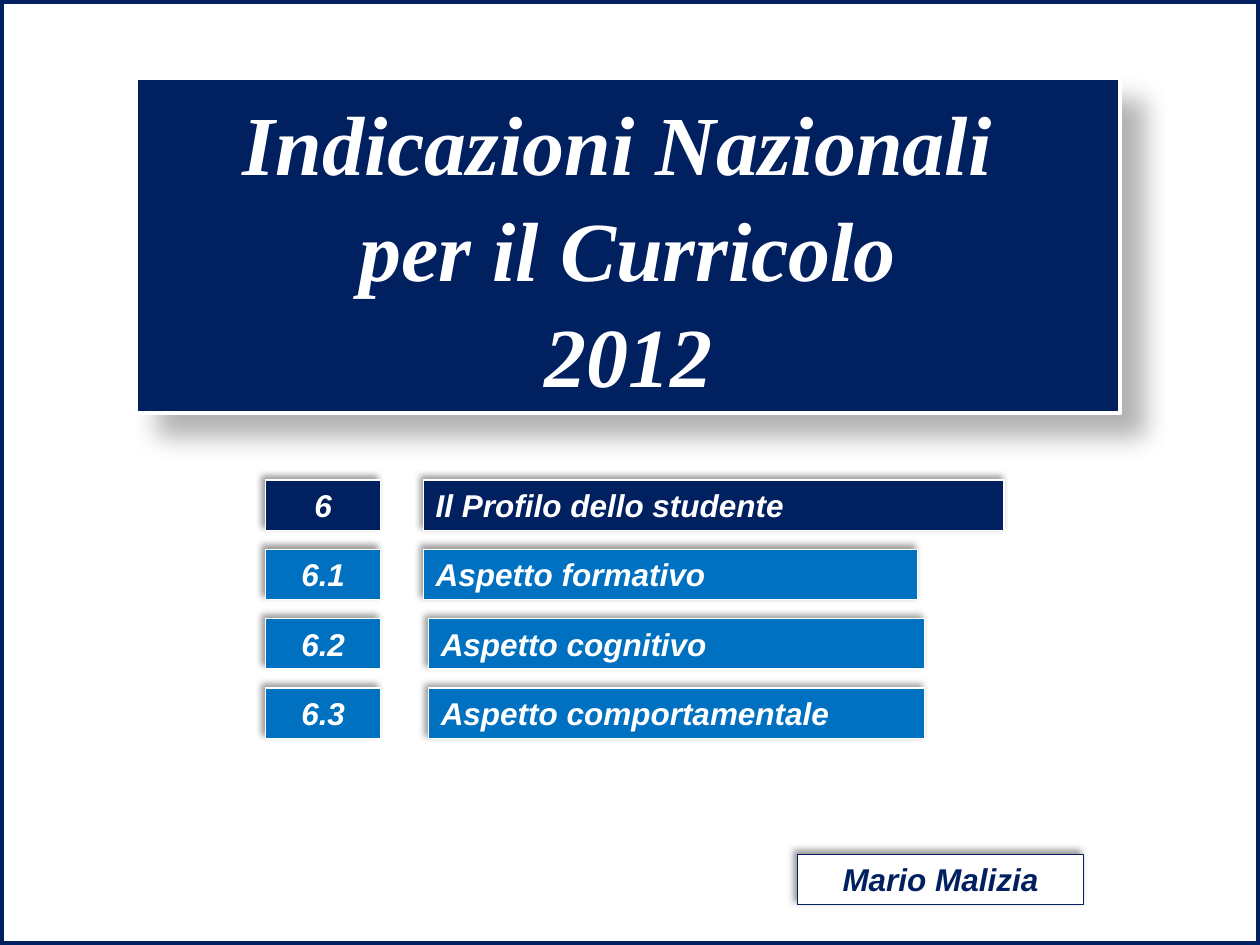
import pptx
import pptx.util
import pptx.dml.color
import pptx.enum.shapes
import pptx.enum.text
import pptx.oxml
import pptx.oxml.ns
from dataclasses import dataclass
from lxml import etree

Inches = pptx.util.Inches
Pt = pptx.util.Pt
Align = pptx.enum.text.PP_ALIGN
Anchor = pptx.enum.text.MSO_ANCHOR
RECTANGLE = pptx.enum.shapes.MSO_SHAPE.RECTANGLE


@dataclass(frozen=True)
class Theme:
    navy: str = "002060"
    blue: str = "0070C0"
    white: str = "FFFFFF"
    title_font: str = "Times New Roman"
    body_font: str = "Arial"
    title_size: int = 48
    body_size: int = 18
    title_spacing: float = 1.05


@dataclass(frozen=True)
class Shadow:
    opacity: int
    blur: float
    distance: float
    angle: int


THEME = Theme()
TITLE_SHADOW = Shadow(opacity=30, blur=15, distance=18, angle=45)
LABEL_SHADOW = Shadow(opacity=40, blur=4, distance=3, angle=225)

TITLE_LINES = ["Indicazioni Nazionali ", "per il Curricolo", "2012"]
AUTHOR = "Mario Malizia"
SECTIONS = [
    ("6", "Il Profilo dello studente", THEME.navy, 3.36, 4.61),
    ("6.1", "Aspetto formativo", THEME.blue, 3.36, 3.92),
    ("6.2", "Aspetto cognitivo", THEME.blue, 3.4, 3.94),
    ("6.3", "Aspetto comportamentale", THEME.blue, 3.4, 3.94),
]

SLIDE_WIDTH, SLIDE_HEIGHT = 10, 7.5
TITLE_BOX = (1.08, 0.62, 7.81, 2.66)
AUTHOR_BOX = (6.33, 6.78, 2.27, 0.4)
NUMBER_LEFT, NUMBER_WIDTH = 2.11, 0.91
ROWS_TOP, ROW_STEP, ROW_HEIGHT = 3.81, 0.55, 0.4


def rgb(color):
    return pptx.dml.color.RGBColor.from_string(color)


def place(shape, box):
    shape.left, shape.top, shape.width, shape.height = map(Inches, box)


def paint(shape, fill, line, line_width):
    if fill:
        shape.fill.solid()
        shape.fill.fore_color.rgb = rgb(fill)
    else:
        shape.fill.background()
    shape.line.color.rgb = rgb(line)
    shape.line.width = Pt(line_width)


def cast_shadow(shape, shadow):
    shape.shadow.inherit = False
    effects = shape._element.spPr.find(pptx.oxml.ns.qn("a:effectLst"))
    outer = etree.SubElement(
        effects, pptx.oxml.ns.qn("a:outerShdw"),
        blurRad=str(Pt(shadow.blur)), dist=str(Pt(shadow.distance)),
        dir=str(shadow.angle * 60000), algn="ctr", rotWithShape="0",
    )
    color = etree.SubElement(outer, pptx.oxml.ns.qn("a:srgbClr"), val="000000")
    etree.SubElement(color, pptx.oxml.ns.qn("a:alpha"), val=str(shadow.opacity * 1000))


def write(shape, lines, *, font=THEME.body_font, size=THEME.body_size,
          color=THEME.white, align=Align.CENTER, anchor=Anchor.TOP, spacing=1.0,
          autofit=pptx.enum.text.MSO_AUTO_SIZE.SHAPE_TO_FIT_TEXT):
    frame = shape.text_frame
    frame.word_wrap = True
    frame.auto_size = autofit
    frame.vertical_anchor = anchor
    frame.text = "\n".join(lines)
    for paragraph in frame.paragraphs:
        paragraph.alignment = align
        paragraph.line_spacing = spacing
        for run in paragraph.runs:
            run.font.name = font
            run.font.size = Pt(size)
            run.font.bold = run.font.italic = True
            run.font.color.rgb = rgb(color)


def add_label(slide, text, box, *, fill, line=THEME.white, **text_format):
    shape = slide.shapes.add_shape(RECTANGLE, *map(Inches, box))
    paint(shape, fill, line, 0.75)
    cast_shadow(shape, LABEL_SHADOW)
    write(shape, [text], **text_format)


def add_border(slide):
    border = slide.shapes.add_shape(
        RECTANGLE, 0, 0, Inches(SLIDE_WIDTH), Inches(SLIDE_HEIGHT))
    paint(border, None, THEME.navy, 4.5)
    border.shadow.inherit = False
    slide.shapes.title._element.addprevious(border._element)


def format_title(slide):
    title = slide.shapes.title
    place(title, TITLE_BOX)
    geometry = pptx.oxml.parse_xml(
        f'<a:prstGeom {pptx.oxml.ns.nsdecls("a")} prst="roundRect"><a:avLst/></a:prstGeom>')
    title._element.spPr.append(geometry)
    paint(title, THEME.navy, THEME.white, 2)
    cast_shadow(title, TITLE_SHADOW)
    write(title, TITLE_LINES, font=THEME.title_font, size=THEME.title_size,
          anchor=Anchor.MIDDLE, spacing=THEME.title_spacing,
          autofit=pptx.enum.text.MSO_AUTO_SIZE.NONE)


def cast_shadow_free_sections(slide):
    for row, (number, name, color, left, width) in enumerate(SECTIONS):
        top = ROWS_TOP + row * ROW_STEP
        add_label(slide, name, (left, top, width, ROW_HEIGHT), fill=color, align=Align.LEFT)
        add_label(slide, number, (NUMBER_LEFT, top, NUMBER_WIDTH, ROW_HEIGHT), fill=color)


def main():
    presentation = pptx.Presentation()
    presentation.slide_width = Inches(SLIDE_WIDTH)
    presentation.slide_height = Inches(SLIDE_HEIGHT)
    slide = presentation.slides.add_slide(presentation.slide_layouts[5])
    add_border(slide)
    format_title(slide)
    add_label(slide, AUTHOR, AUTHOR_BOX, fill=THEME.white, line=THEME.navy, color=THEME.navy)
    cast_shadow_free_sections(slide)
    presentation.save("out.pptx")


if __name__ == "__main__":
    main()
